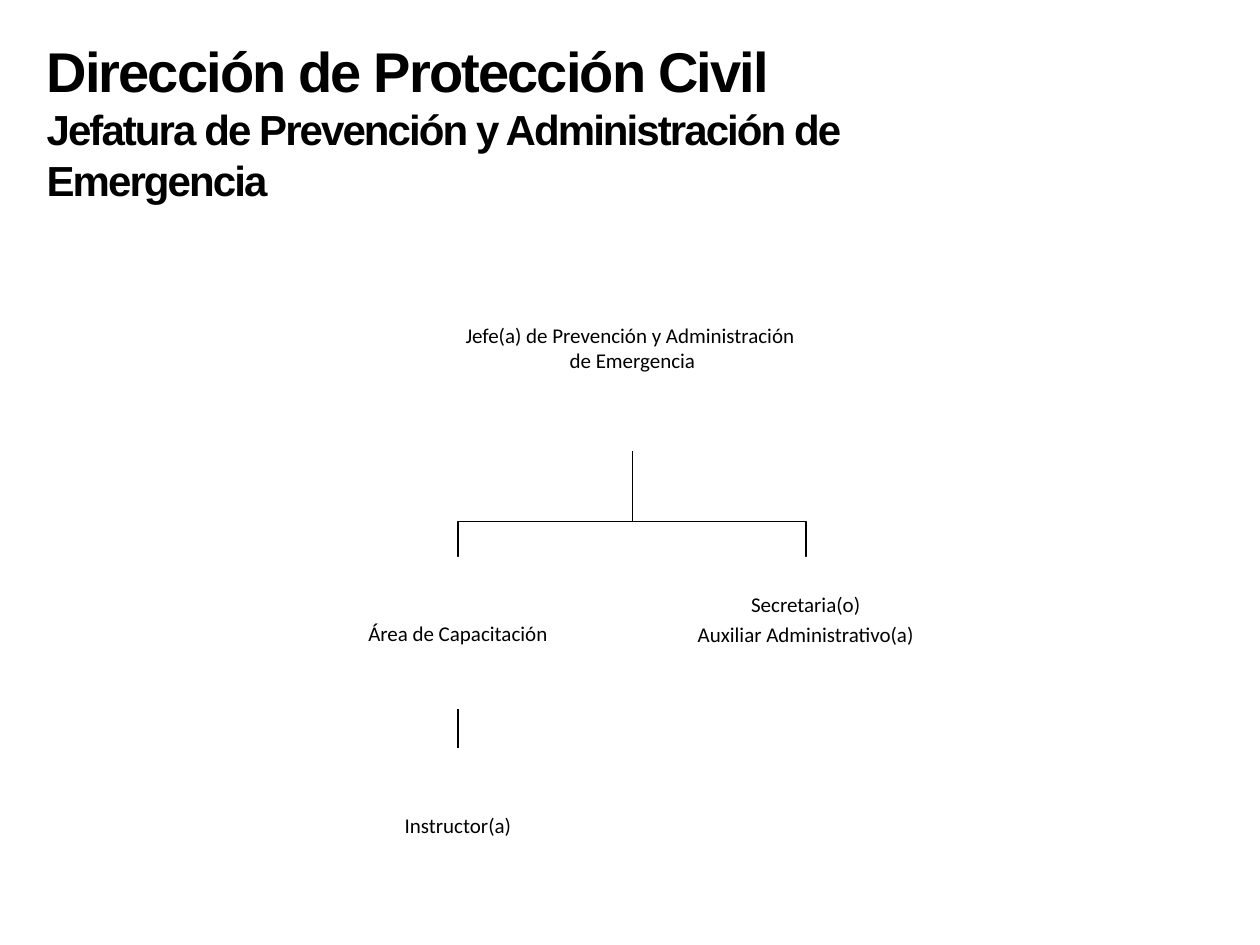
import pptx
import pptx.util
import pptx.dml.color
import pptx.enum.shapes
import pptx.enum.text
import pptx.oxml
import pptx.oxml.ns

Inches = pptx.util.Inches
Pt = pptx.util.Pt
ALIGN = pptx.enum.text.PP_ALIGN
ANCHOR = pptx.enum.text.MSO_ANCHOR

BOX_W, BOX_H = 2.23, 1.21
AREA_X, STAFF_X = 2.52, 5.28
ROW_Y, INSTRUCTOR_Y = 4.42, 5.94
TRUNK_X, TRUNK_Y, BRANCH_Y = 5.02, 3.58, 4.14


def color(value):
    return pptx.dml.color.RGBColor.from_string(value)


def write(p, text, size=12, font="Calibri", bold=False, align=ALIGN.CENTER,
          spacing=None, line=None, after=None):
    p.alignment = align
    p.line_spacing = line
    p.space_after = after
    for i, part in enumerate(text.split("\n")):
        if i:
            p.add_line_break()
        r = p.add_run()
        r.text = part
        r.font.size = Pt(size)
        r.font.name = font
        r.font.bold = bold
        r.font.color.rgb = color("000000")
        if spacing is not None:
            r._r.get_or_add_rPr().set("spc", str(round(spacing * 100)))


def fill_text(sp, lines, bottom=0.01, **fmt):
    tf = sp.text_frame
    tf.word_wrap = True
    tf.vertical_anchor = ANCHOR.MIDDLE
    tf.margin_left = tf.margin_right = tf.margin_top = Inches(0.01)
    tf.margin_bottom = Inches(bottom)
    for i, text in enumerate(lines):
        write(tf.add_paragraph() if i else tf.paragraphs[0], text, **fmt)


def add_title(s):
    sp = s.shapes.title
    sp.left, sp.top = Inches(0.27), Inches(0.24)
    sp.width, sp.height = Inches(7.96), Inches(1.45)
    tf = sp.text_frame
    tf.word_wrap = True
    tf.auto_size = pptx.enum.text.MSO_AUTO_SIZE.SHAPE_TO_FIT_TEXT
    tf.vertical_anchor = ANCHOR.TOP
    fmt = dict(font="Arial", bold=True, align=ALIGN.LEFT, spacing=-1.1)
    write(tf.paragraphs[0], "Dirección de Protección Civil", size=32, **fmt)
    write(tf.add_paragraph(),
          "Jefatura de Prevención y Administración de \nEmergencia", size=24, **fmt)


def add_box(s, x, y, lines, **fmt):
    sp = s.shapes.add_shape(pptx.enum.shapes.MSO_SHAPE.RECTANGLE,
                            Inches(x), Inches(y), Inches(BOX_W), Inches(BOX_H))
    sp.shadow.inherit = False
    sp.fill.solid()
    sp.fill.fore_color.rgb = color("FFFFFF")
    sp.line.fill.background()
    fill_text(sp, lines, **fmt)
    return sp


def style_line(sp):
    sp.line.color.rgb = color("000000")
    sp.line.width = Pt(1)


def add_branch(s, x):
    points = [(TRUNK_X, BRANCH_Y), (x, BRANCH_Y), (x, ROW_Y)]
    fb = s.shapes.build_freeform(Inches(TRUNK_X), Inches(TRUNK_Y))
    fb.add_line_segments([(Inches(px), Inches(py)) for px, py in points], close=False)
    sp = fb.convert_to_shape()
    sp.shadow.inherit = False
    sp.fill.background()
    style_line(sp)


def add_link(s, top, bottom):
    c = s.shapes.add_connector(pptx.enum.shapes.MSO_CONNECTOR.STRAIGHT, 0, 0, 0, 0)
    c.begin_connect(top, 2)
    c.end_connect(bottom, 0)
    style_line(c)
    c._element.spPr.append(pptx.oxml.parse_xml(
        "<a:effectLst %s/>" % pptx.oxml.ns.nsdecls("a")))


def main():
    prs = pptx.Presentation()
    prs.slide_width, prs.slide_height = Inches(10), Inches(7.5)
    s = prs.slides.add_slide(prs.slide_layouts[5])
    add_title(s)
    for x in (STAFF_X, AREA_X):
        add_branch(s, x + BOX_W / 2)
    head = s.shapes.add_textbox(Inches(3.52), Inches(1.93), Inches(3), Inches(1.66))
    fill_text(head, ["Jefe(a) de Prevención y Administración \nde Emergencia"])
    area = add_box(s, AREA_X, ROW_Y, ["Área de Capacitación"])
    instructor = add_box(s, AREA_X, INSTRUCTOR_Y, ["Instructor(a)"])
    add_box(s, STAFF_X, ROW_Y, ["Secretaria(o)", "Auxiliar Administrativo(a)"],
            bottom=0.2, line=0.9, after=Pt(4.2))
    add_link(s, area, instructor)
    prs.save("out.pptx")


if __name__ == "__main__":
    main()
